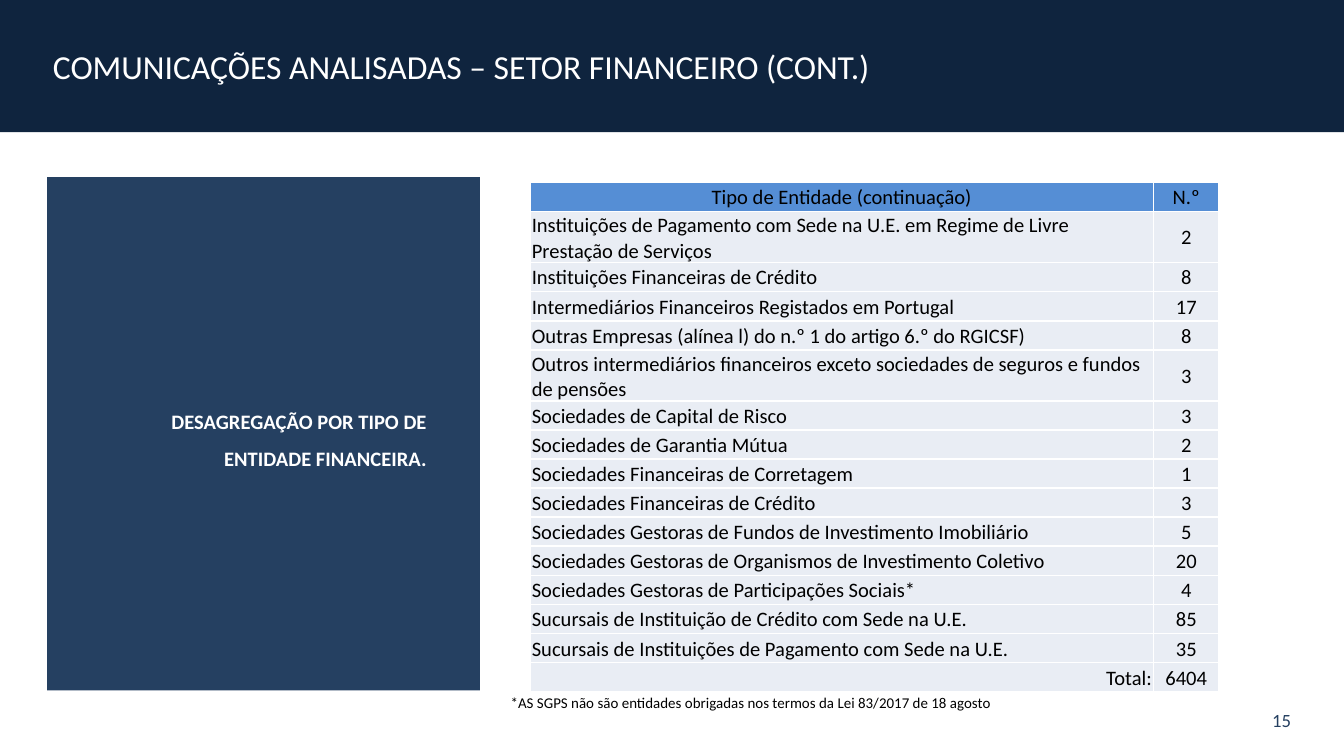
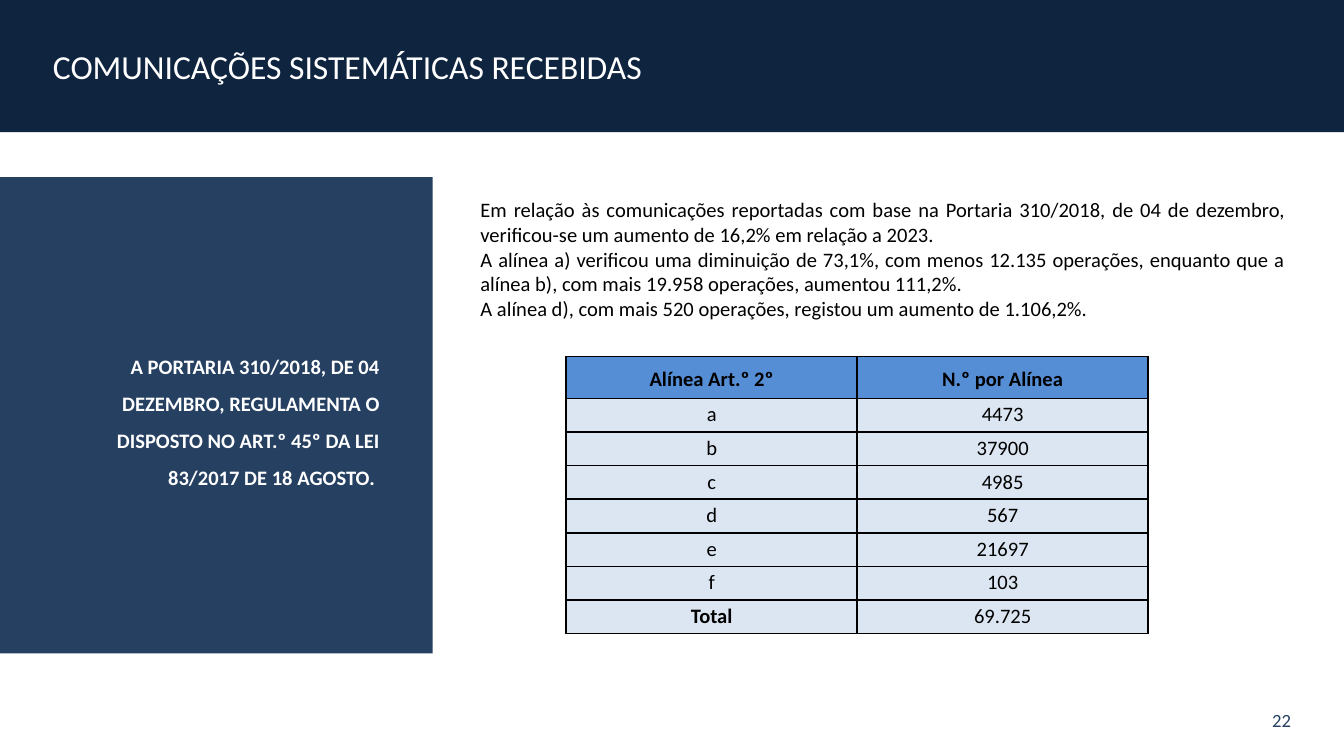
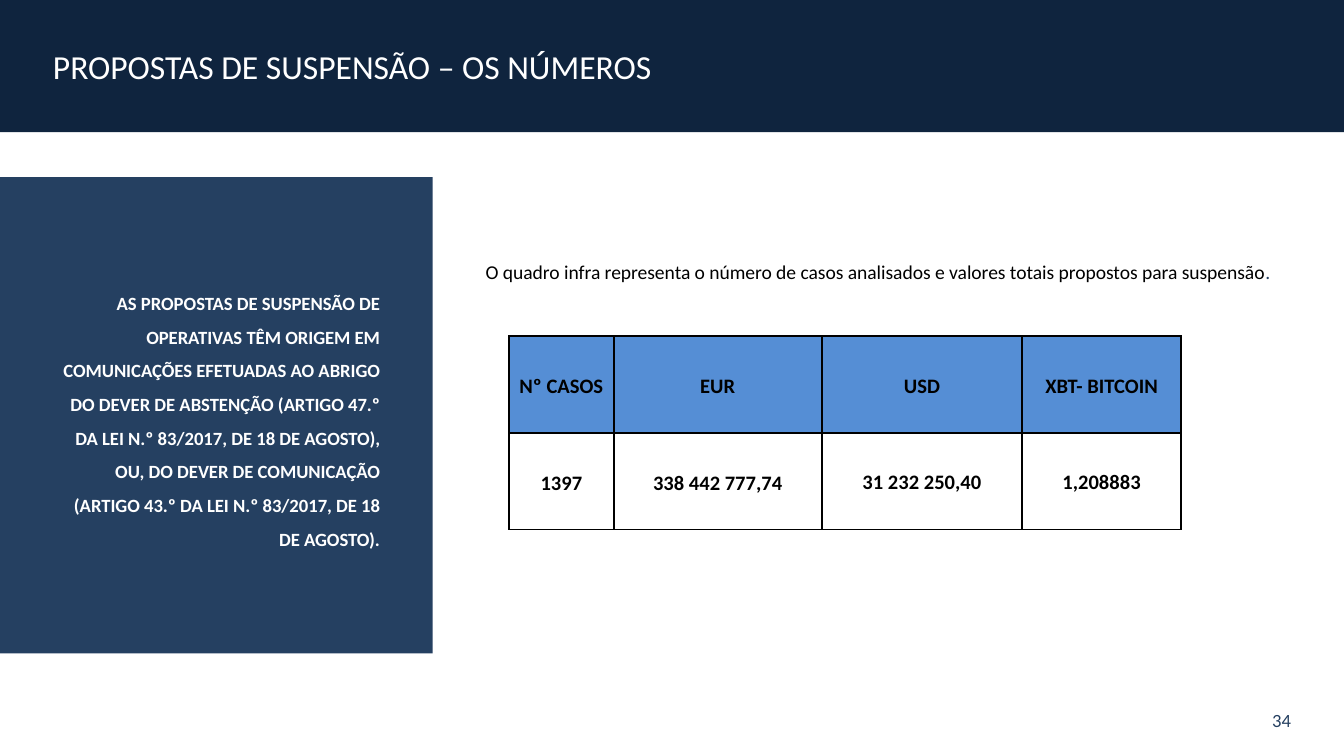
from dataclasses import dataclass

from lxml.etree import SubElement
from pptx import Presentation
from pptx.dml.color import RGBColor
from pptx.enum.shapes import MSO_SHAPE
from pptx.enum.text import MSO_ANCHOR, MSO_AUTO_SIZE, PP_ALIGN
from pptx.oxml.ns import qn
from pptx.util import Cm, Pt

NAVY = RGBColor(0x0F, 0x24, 0x3E)
BLUE = RGBColor(0x25, 0x40, 0x61)
HEADER = RGBColor(0x55, 0x8E, 0xD5)
PALE_GREY = RGBColor(0xE9, 0xED, 0xF4)
PALE_BLUE = RGBColor(0xDC, 0xE6, 0xF2)
WHITE = RGBColor(0xFF, 0xFF, 0xFF)
BLACK = RGBColor(0x00, 0x00, 0x00)

FONT = "Calibri"
WIDTH, HEIGHT = 25.4, 14.29
BAND_HEIGHT = 2.5
PANEL_TOP, PANEL_WIDTH = 3.35, 8.18
WIDE_INSETS = (1, 0.25, 1, 0.25)
TIGHT_INSETS = (0.03, 0.03, 0.03, 0)
LOOSE_INSETS = (0.18, 0, 0.18, 0)

LEFT, CENTER, RIGHT, JUSTIFY = (
    PP_ALIGN.LEFT, PP_ALIGN.CENTER, PP_ALIGN.RIGHT, PP_ALIGN.JUSTIFY)
TOP, MIDDLE = MSO_ANCHOR.TOP, MSO_ANCHOR.MIDDLE

ENTITIES = [
    ("Tipo de Entidade (continuação)", "N.º"),
    ("Instituições de Pagamento com Sede na U.E. em Regime de Livre "
     "Prestação de Serviços", "2"),
    ("Instituições Financeiras de Crédito", "8"),
    ("Intermediários Financeiros Registados em Portugal", "17"),
    ("Outras Empresas (alínea l) do n.º 1 do artigo 6.º do RGICSF)", "8"),
    ("Outros intermediários financeiros exceto sociedades de seguros e "
     "fundos de pensões", "3"),
    ("Sociedades de Capital de Risco", "3"),
    ("Sociedades de Garantia Mútua", "2"),
    ("Sociedades Financeiras de Corretagem", "1"),
    ("Sociedades Financeiras de Crédito", "3"),
    ("Sociedades Gestoras de Fundos de Investimento Imobiliário", "5"),
    ("Sociedades Gestoras de Organismos de Investimento Coletivo", "20"),
    ("Sociedades Gestoras de Participações Sociais*", "4"),
    ("Sucursais de Instituição de Crédito com Sede na U.E.", "85"),
    ("Sucursais de Instituições de Pagamento com Sede na U.E.", "35"),
    ("Total:", "6404"),
]
SUBPARAGRAPHS = [
    ("Alínea Art.º 2º", "N.º por Alínea"),
    ("a", "4473"),
    ("b", "37900"),
    ("c", "4985"),
    ("d", "567"),
    ("e", "21697"),
    ("f", "103"),
    ("Total", "69.725"),
]
SUSPENSIONS = [
    ("Nº CASOS", "EUR", "USD", "XBT- BITCOIN"),
    ("1397", "338 442 777,74", "31 232 250,40", "1,208883"),
]


@dataclass
class CellStyle:
    fill: RGBColor | None = None
    bold: bool = False
    align: PP_ALIGN = CENTER
    anchor: MSO_ANCHOR = MIDDLE
    insets: tuple = LOOSE_INSETS
    line: float | None = 1.15
    before: float | None = 5


def add_run(p, text, size, color, bold=False):
    r = p.add_run()
    r.text = text
    r.font.name = FONT
    r.font.size = Pt(size)
    r.font.color.rgb = color
    r.font.bold = bold


def write(p, text, size, color, bold=False, align=LEFT, line=None, before=None):
    p.alignment = align
    if line:
        p.line_spacing = line
    if before:
        p.space_before = Pt(before)
    add_run(p, text, size, color, bold)


def set_insets(target, insets):
    """Set the margins of a text frame or a table cell, in centimetres."""
    (target.margin_left, target.margin_top,
     target.margin_right, target.margin_bottom) = map(Cm, insets)


def add_text(s, box, insets=WIDE_INSETS, anchor=TOP):
    tf = s.shapes.add_textbox(*map(Cm, box)).text_frame
    tf.word_wrap = True
    tf.vertical_anchor = anchor
    set_insets(tf, insets)
    return tf


def add_slide(prs, title, number):
    """Add a slide with its title band and page number."""
    s = prs.slides.add_slide(prs.slide_layouts[5])
    band = s.shapes.title
    band.left, band.top, band.width, band.height = map(
        Cm, (0, 0, WIDTH, BAND_HEIGHT))
    band.fill.solid()
    band.fill.fore_color.rgb = NAVY
    tf = band.text_frame
    tf.auto_size = MSO_AUTO_SIZE.NONE
    tf.vertical_anchor = MIDDLE
    set_insets(tf, (1, 0.5, 1, 0.5))
    write(tf.paragraphs[0], title, 18, WHITE)

    tf = add_text(s, (21.82, 13.23, 3.58, 0.76), anchor=MIDDLE)
    write(tf.paragraphs[0], number, 10, BLUE, align=RIGHT)
    return s


def add_panel(s, text, left=0, height=9, size=11):
    sp = s.shapes.add_shape(MSO_SHAPE.RECTANGLE, Cm(left), Cm(PANEL_TOP),
                            Cm(PANEL_WIDTH), Cm(height))
    sp.shadow.inherit = False
    sp.fill.solid()
    sp.fill.fore_color.rgb = BLUE
    sp.line.fill.background()
    tf = sp.text_frame
    tf.word_wrap = True
    tf.vertical_anchor = MIDDLE
    set_insets(tf, WIDE_INSETS)
    write(tf.paragraphs[0], text, size, WHITE, True, RIGHT, 1.5)


def set_borders(cell, color):
    tc_pr = cell._tc.get_or_add_tcPr()
    for side in ("a:lnL", "a:lnR", "a:lnT", "a:lnB"):
        ln = SubElement(tc_pr, qn(side), w=str(Pt(1)))
        fill = SubElement(ln, qn("a:solidFill"))
        SubElement(fill, qn("a:srgbClr"), val=str(color))


def format_cell(cell, text, style, border):
    set_borders(cell, border)
    if style.fill is None:
        cell.fill.background()
    else:
        cell.fill.solid()
        cell.fill.fore_color.rgb = style.fill
    cell.vertical_anchor = style.anchor
    set_insets(cell, style.insets)
    write(cell.text_frame.paragraphs[0], text, 11, BLACK, style.bold,
          style.align, style.line, style.before)


def add_grid(s, left, top, widths, heights, rows, style_at, border):
    """Add a table; style_at(row, column) gives the style of each cell."""
    table = s.shapes.add_table(
        len(rows), len(widths), Cm(left), Cm(top),
        Cm(sum(widths)), Cm(sum(heights))).table
    table.first_row = table.horz_banding = False
    for column, width in zip(table.columns, widths):
        column.width = Cm(width)
    for row, height in zip(table.rows, heights):
        row.height = Cm(height)
    for i, texts in enumerate(rows):
        for j, text in enumerate(texts):
            format_cell(table.cell(i, j), text, style_at(i, j), border)


def entity_style(i, j):
    align = CENTER
    if j == 0 and i > 0:
        align = RIGHT if i == len(ENTITIES) - 1 else LEFT
    return CellStyle(PALE_GREY if i else HEADER, align=align,
                     insets=TIGHT_INSETS, line=None, before=None)


def subparagraph_style(i, j):
    if i == 0:
        return CellStyle(HEADER, bold=True)
    is_total_label = j == 0 and i == len(SUBPARAGRAPHS) - 1
    return CellStyle(PALE_BLUE, bold=is_total_label, anchor=TOP)


def suspension_style(i, j):
    if i == 0:
        return CellStyle(HEADER, bold=True)
    if j < 2:
        return CellStyle(bold=True)
    return CellStyle(bold=True, insets=TIGHT_INSETS, line=None, before=None)


def add_entities_slide(prs):
    s = add_slide(prs, "COMUNICAÇÕES ANALISADAS – SETOR FINANCEIRO (CONT.)", "15")
    add_panel(s, "DESAGREGAÇÃO POR TIPO DE ENTIDADE FINANCEIRA.",
              left=0.89, height=9.7)
    add_grid(s, 10.02, 3.45, (11.78, 1.24), [0.55] * len(ENTITIES),
             ENTITIES, entity_style, WHITE)
    tf = add_text(s, (9.4, 12.98, 10.97, 0.6), (0.25, 0.13, 0.25, 0.13))
    write(tf.paragraphs[0], "*AS SGPS não são entidades obrigadas nos termos "
          "da Lei 83/2017 de 18 agosto", 8, BLACK)


def add_systematic_slide(prs):
    s = add_slide(prs, "COMUNICAÇÕES SISTEMÁTICAS RECEBIDAS", "22")
    add_panel(s, "A PORTARIA 310/2018, DE 04 DEZEMBRO, REGULAMENTA O DISPOSTO "
              "NO ART.º 45º DA LEI 83/2017 DE 18 AGOSTO. ")
    tf = add_text(s, (8.08, 3.48, 17.22, 2.84))
    findings = (
        "Em relação às comunicações reportadas com base na Portaria 310/2018, "
        "de 04 de dezembro, verificou-se um aumento de 16,2% em relação a 2023.",
        "A alínea a) verificou uma diminuição de 73,1%, com menos 12.135 "
        "operações, enquanto que a alínea b), com mais 19.958 operações, "
        "aumentou 111,2%.",
        "A alínea d), com mais 520 operações, registou um aumento de 1.106,2%.",
    )
    for i, finding in enumerate(findings):
        p = tf.add_paragraph() if i else tf.paragraphs[0]
        write(p, finding, 11, BLACK, align=JUSTIFY)
    heights = [0.79] + [0.635] * (len(SUBPARAGRAPHS) - 1)
    add_grid(s, 10.7, 6.74, (5.5, 5.5), heights,
             SUBPARAGRAPHS, subparagraph_style, BLACK)


def add_suspensions_slide(prs):
    s = add_slide(prs, "PROPOSTAS DE SUSPENSÃO – OS NÚMEROS", "34")
    tf = add_text(s, (8.18, 4.45, 17.22, 1.12))
    p = tf.paragraphs[0]
    write(p, "O quadro infra representa o número de casos analisados e valores "
          "totais propostos para suspensão", 10.5, BLACK, align=JUSTIFY, line=1.5)
    add_run(p, ".", 10.5, BLUE)
    add_grid(s, 9.62, 6.35, (1.98, 3.93, 3.79, 3), (1.83, 1.83),
             SUSPENSIONS, suspension_style, BLACK)
    add_panel(s, "AS PROPOSTAS DE SUSPENSÃO DE OPERATIVAS TÊM ORIGEM EM "
              "COMUNICAÇÕES EFETUADAS AO ABRIGO DO DEVER DE ABSTENÇÃO "
              "(ARTIGO 47.º DA LEI N.º 83/2017, DE 18 DE AGOSTO), OU, DO DEVER "
              "DE COMUNICAÇÃO (ARTIGO 43.º DA LEI N.º 83/2017, DE 18 DE "
              "AGOSTO).", size=10)


def main():
    prs = Presentation()
    prs.slide_width, prs.slide_height = Cm(WIDTH), Cm(HEIGHT)
    add_entities_slide(prs)
    add_systematic_slide(prs)
    add_suspensions_slide(prs)
    prs.save("out.pptx")


if __name__ == "__main__":
    main()
